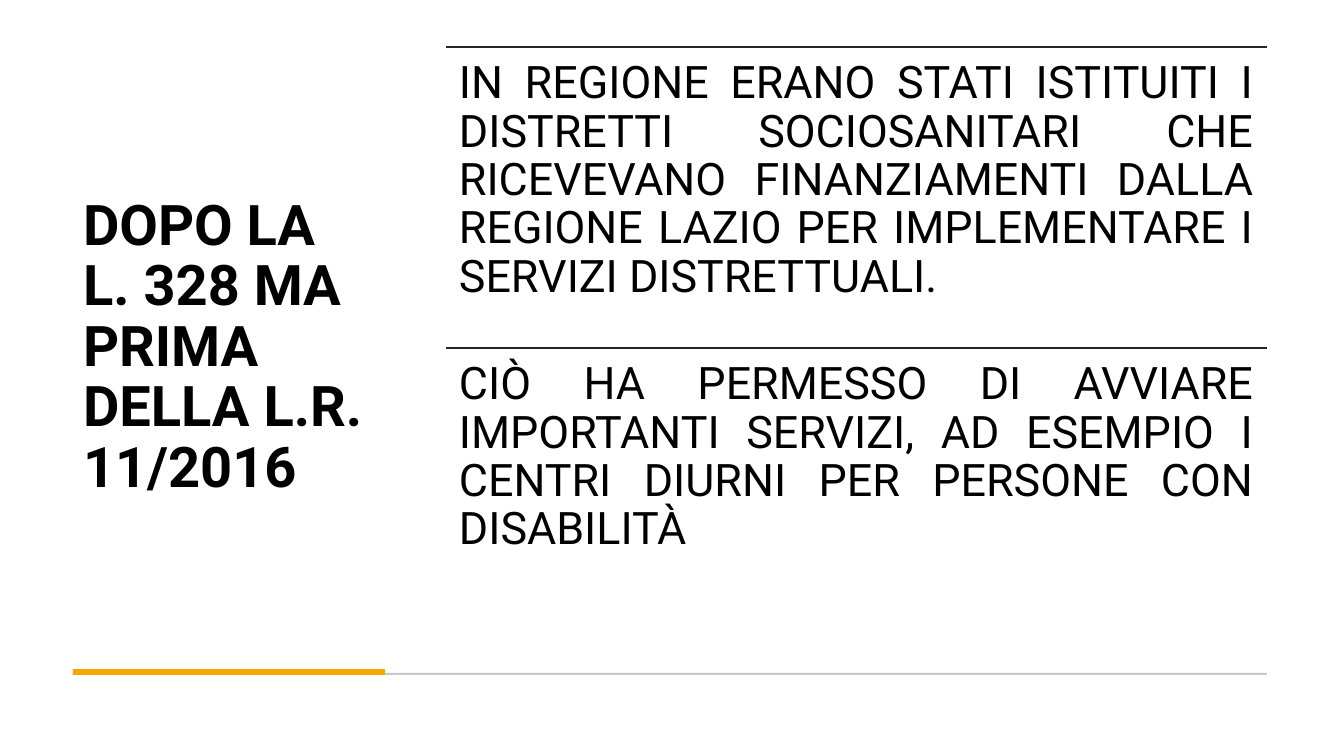
from dataclasses import dataclass

from pptx import Presentation
from pptx.dml.color import RGBColor
from pptx.enum.shapes import MSO_CONNECTOR as Connector, MSO_SHAPE as Shape
from pptx.enum.text import MSO_ANCHOR as Anchor, MSO_AUTO_SIZE as AutoSize, PP_ALIGN as Align
from pptx.oxml.ns import qn
from pptx.util import Emu, Pt
from lxml.etree import SubElement

# Content
TITLE_LINES = ["DOPO LA L. 328 MA", "PRIMA DELLA L.R. 11/2016"]
STATEMENTS = [
    "IN REGIONE ERANO STATI ISTITUITI I DISTRETTI SOCIOSANITARI CHE RICEVEVANO "
    "FINANZIAMENTI DALLA REGIONE LAZIO PER IMPLEMENTARE I SERVIZI DISTRETTUALI.",
    "CIÒ HA PERMESSO DI AVVIARE IMPORTANTI SERVIZI, AD ESEMPIO I CENTRI DIURNI "
    "PER PERSONE CON DISABILITÀ ",
]


# Theme
@dataclass(frozen=True)
class Theme:
    font: str = "Roboto"
    text: RGBColor = RGBColor(0x00, 0x00, 0x00)
    rule: RGBColor = RGBColor(0x26, 0x26, 0x26)
    track: RGBColor = RGBColor(0xC9, 0xC9, 0xC9)
    accent: RGBColor = RGBColor(0xF5, 0xA7, 0x00)
    title_size: int = 40
    body_size: int = 32


THEME = Theme()

# Layout in px
PAGE_W, PAGE_H = 1344, 756
LEFT, TOP, RIGHT = 73, 47, 1267
TITLE_W, CONTENT_H = 312, 602
BODY_LEFT, BODY_INSET = 446, 13
FOOTER_BARS = [  # top, width, height, colour
    (673, RIGHT - LEFT, 2, THEME.track),
    (669, TITLE_W, 6, THEME.accent),
]


def px(length):
    return Emu(round(length * 914400 / 100.8))


def add_span(para, text, size, bold=False):
    span = para.add_run()
    span.text = text
    font = span.font
    font.name, font.size, font.bold = THEME.font, Pt(size), bold
    font.color.rgb = THEME.text


def write_title(page):
    title = page.shapes.title
    title.left, title.top, title.width, title.height = map(px, (LEFT, TOP, TITLE_W, CONTENT_H))
    frame = title.text_frame
    frame.word_wrap, frame.auto_size = True, AutoSize.NONE
    frame.vertical_anchor = Anchor.MIDDLE
    para = frame.paragraphs[0]
    para.alignment, para.line_spacing = Align.LEFT, 0.9
    for index, line in enumerate(TITLE_LINES):
        if index:
            para.add_line_break()
        add_span(para, line, THEME.title_size, bold=True)


def add_bar(page, top, width, height, colour):
    bar = page.shapes.add_shape(Shape.RECTANGLE, px(LEFT), px(top), px(width), px(height))
    bar.shadow.inherit = False
    bar.fill.solid()
    bar.fill.fore_color.rgb = colour
    bar.line.fill.background()


def add_statement(page, text, top, height):
    rule = page.shapes.add_connector(Connector.STRAIGHT, px(BODY_LEFT), px(top), px(RIGHT), px(top))
    rule.line.color.rgb, rule.line.width = THEME.rule, Pt(1)
    SubElement(rule._element.spPr, qn("a:effectLst"))

    box = page.shapes.add_textbox(px(BODY_LEFT), px(top), px(RIGHT - BODY_LEFT), px(height))
    frame = box.text_frame
    frame.word_wrap = True
    frame.margin_left = frame.margin_right = px(BODY_INSET)
    frame.margin_top = frame.margin_bottom = px(BODY_INSET)
    para = frame.paragraphs[0]
    para.alignment, para.line_spacing = Align.JUSTIFY, 0.9
    add_span(para, text, THEME.body_size)


def main():
    deck = Presentation()
    deck.slide_width, deck.slide_height = px(PAGE_W), px(PAGE_H)
    page = deck.slides.add_slide(deck.slide_layouts[5])

    # Title and footer bars
    write_title(page)
    for bar in FOOTER_BARS:
        add_bar(page, *bar)

    # Statements share the content height equally
    row_height = CONTENT_H // len(STATEMENTS)
    for row, text in enumerate(STATEMENTS):
        add_statement(page, text, TOP + row * row_height, row_height)

    deck.save("out.pptx")


if __name__ == "__main__":
    main()
